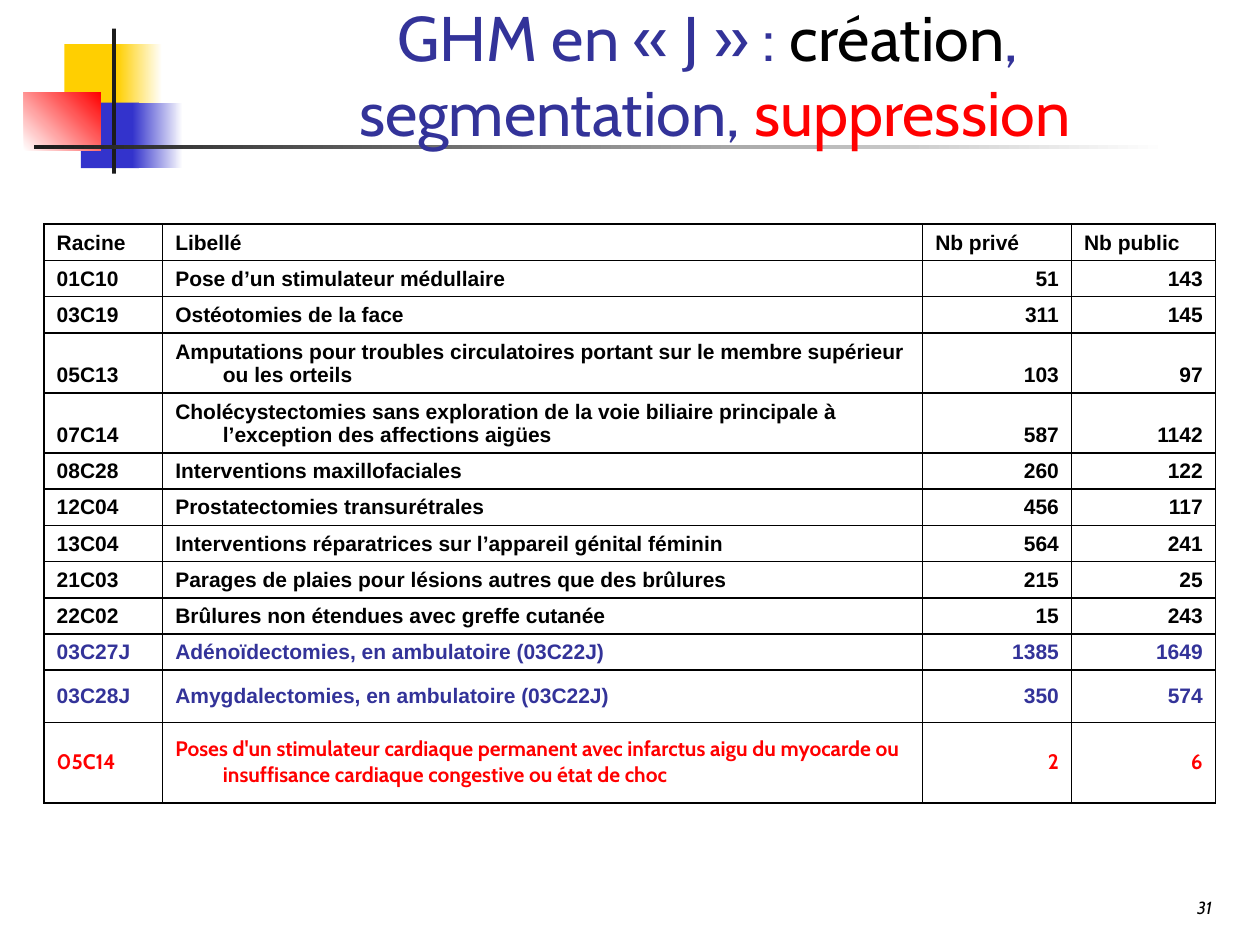
from lxml import etree
from pptx import Presentation
from pptx.dml.color import RGBColor
from pptx.enum.shapes import MSO_SHAPE
from pptx.enum.text import MSO_ANCHOR, PP_ALIGN
from pptx.oxml.ns import qn
from pptx.util import Cm, Pt

RECT = MSO_SHAPE.RECTANGLE
MIDDLE, BOTTOM = MSO_ANCHOR.MIDDLE, MSO_ANCHOR.BOTTOM
LEFT, CENTER, RIGHT = PP_ALIGN.LEFT, PP_ALIGN.CENTER, PP_ALIGN.RIGHT
BLACK = RGBColor(0x00, 0x00, 0x00)
WHITE = RGBColor(0xFF, 0xFF, 0xFF)
YELLOW = RGBColor(0xFF, 0xCF, 0x01)
BLUE = RGBColor(0x33, 0x33, 0xCC)
RED = RGBColor(0xFF, 0x00, 0x00)
DARK = RGBColor(0x1C, 0x1C, 0x1C)
INDIGO = RGBColor(0x33, 0x33, 0x99)


def add_bar(shapes, left, top, width, height, color, end=None, angle=0):
    bar = shapes.add_shape(RECT, Cm(left), Cm(top), Cm(width), Cm(height))
    bar.shadow.inherit = False
    bar.line.fill.background()
    if end is None:
        bar.fill.solid()
        bar.fill.fore_color.rgb = color
    else:
        bar.fill.gradient()
        bar.fill.gradient_angle = angle
        for stop, tint in zip(bar.fill.gradient_stops, (color, end)):
            stop.color.rgb = tint


def add_text(left, top, width, height, anchor, align):
    frame = slide.shapes.add_textbox(Cm(left), Cm(top), Cm(width), Cm(height)).text_frame
    frame.word_wrap = True
    frame.vertical_anchor = anchor
    para = frame.paragraphs[0]
    para.alignment = align
    para.font.name = "Cabin"
    return para


prs = Presentation()
prs.slide_width, prs.slide_height = Cm(25.4), Cm(19.05)
slide = prs.slides.add_slide(prs.slide_layouts[6])

logo = slide.shapes.add_group_shape().shapes
add_bar(logo, 1.3, 0.89, 1.22, 1.32, YELLOW)
add_bar(logo, 2.36, 0.89, 0.91, 1.32, YELLOW, WHITE)
add_bar(logo, 1.63, 2.07, 1.17, 1.32, BLUE)
add_bar(logo, 2.67, 2.07, 1.02, 1.32, BLUE, WHITE)
add_bar(logo, 0.48, 1.86, 1.55, 1.17, WHITE, RED, 45)
add_bar(logo, 2.26, 0.58, 0.08, 2.92, DARK)
add_bar(slide.shapes, 0.69, 2.93, 22.86, 0.08, DARK, WHITE)

rows = [
    ("Racine", "Libellé", "Nb privé", "Nb public"),
    ("01C10", "Pose d’un stimulateur médullaire", "51", "143"),
    ("03C19", "Ostéotomies de la face", "311", "145"),
    ("05C13", "Amputations pour troubles circulatoires portant sur le membre supérieur ou les orteils", "103", "97"),
    ("07C14", "Cholécystectomies sans exploration de la voie biliaire principale à l’exception des affections aigües", "587", "1142"),
    ("08C28", "Interventions maxillofaciales", "260", "122"),
    ("12C04", "Prostatectomies transurétrales", "456", "117"),
    ("13C04", "Interventions réparatrices sur l’appareil génital féminin", "564", "241"),
    ("21C03", "Parages de plaies pour lésions autres que des brûlures", "215", "25"),
    ("22C02", "Brûlures non étendues avec greffe cutanée", "15", "243"),
    ("03C27J", "Adénoïdectomies, en ambulatoire (03C22J)", "1385", "1649"),
    ("03C28J", "Amygdalectomies, en ambulatoire (03C22J)", "350", "574"),
    ("05C14", "Poses d'un stimulateur cardiaque permanent avec infarctus aigu du myocarde ou insuffisance cardiaque congestive ou état de choc", "2", "6"),
]
widths = [2.39, 15.32, 3, 2.9]
heights = [0.73] * 3 + [1.21] * 2 + [0.73] * 6 + [1.05, 1.63]
table = slide.shapes.add_table(
    len(rows), len(widths), Cm(0.89), Cm(4.52), Cm(sum(widths)), Cm(sum(heights))
).table
table.first_row = table.horz_banding = False
for col, width in zip(table.columns, widths):
    col.width = Cm(width)

for i, (row, height) in enumerate(zip(rows, heights)):
    table.rows[i].height = Cm(height)
    last = i == len(rows) - 1
    color = RED if last else INDIGO if i >= 10 else BLACK
    for j, text in enumerate(row):
        cell = table.cell(i, j)
        cell.vertical_anchor = MIDDLE if i >= 11 else BOTTOM
        cell.margin_top, cell.margin_bottom = Cm(0.1), Cm(0.12)
        cell.text = text
        para = cell.text_frame.paragraphs[0]
        para.alignment = RIGHT if i and j >= 2 else LEFT
        props = para._p.get_or_add_pPr()
        props.set("marL", str(Cm(0.96)))
        props.set("indent", str(-Cm(0.96)))
        font = para.font
        font.name = "Cabin" if last else "Arial"
        font.size, font.bold = Pt(12), True
        font.color.rgb = color
        for side in ("a:lnL", "a:lnR", "a:lnT", "a:lnB"):
            line = etree.SubElement(cell._tc.get_or_add_tcPr(), qn(side), w=str(Pt(1)))
            fill = etree.SubElement(line, qn("a:solidFill"))
            etree.SubElement(fill, qn("a:srgbClr"), val=str(BLACK))
        cell.fill.background()

title = add_text(4.01, 0.43, 20.8, 2.11, MIDDLE, CENTER)
title.font.size = Pt(36)
parts = [
    ("GHM en « J » : ", INDIGO),
    ("création", BLACK),
    (", ", INDIGO),
    ("segmentation, ", INDIGO),
    ("suppression", RED),
]
for text, color in parts:
    if text.startswith("seg"):
        title.add_line_break()
    run = title.add_run()
    run.text = text
    run.font.color.rgb = color

page = add_text(20.29, 17.73, 4.39, 0.91, BOTTOM, RIGHT)
page.text = "31"
page.font.size, page.font.italic = Pt(10), True
page.font.color.rgb = BLACK

prs.save("out.pptx")
